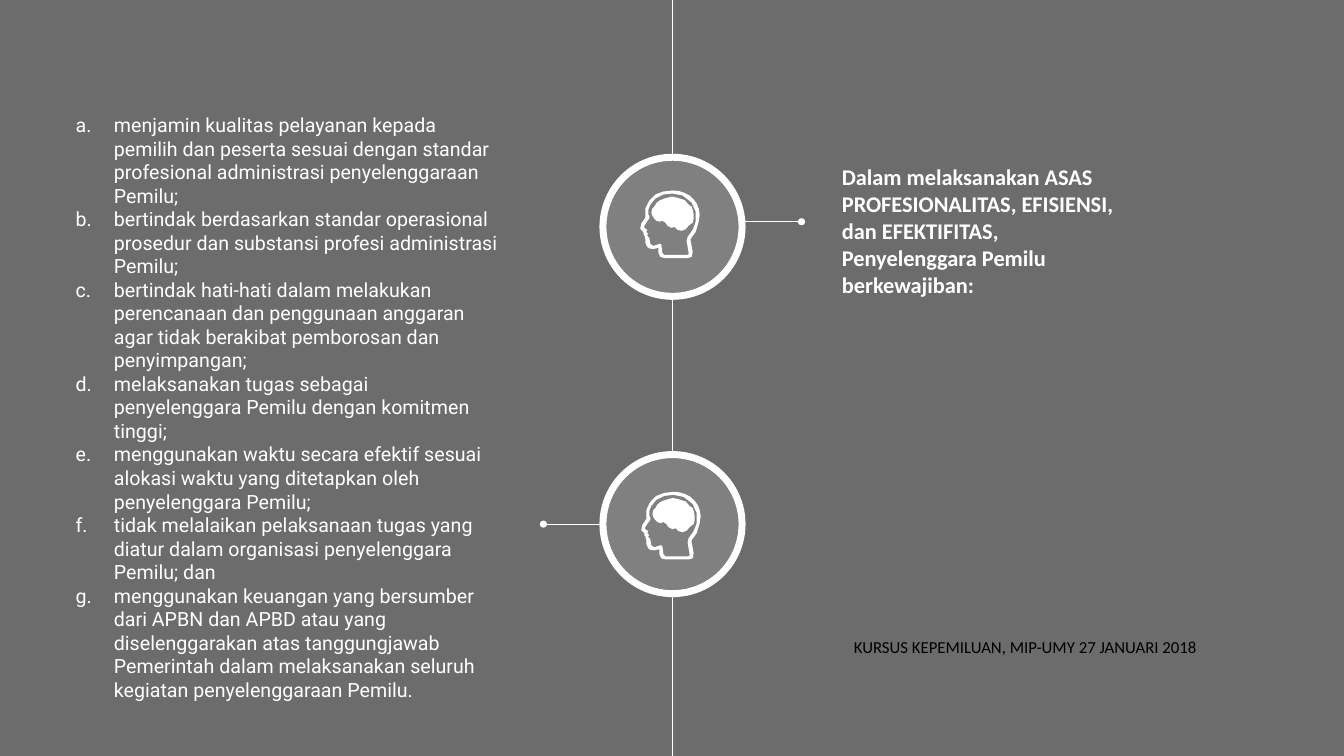
from lxml.etree import SubElement
from pptx import Presentation
from pptx.dml.color import RGBColor
from pptx.enum.shapes import MSO_CONNECTOR as Link, MSO_SHAPE as Kind
from pptx.enum.text import MSO_ANCHOR as Anchor, MSO_AUTO_SIZE as Fit, PP_ALIGN as Align
from pptx.oxml.ns import qn
from pptx.util import Inches, Pt

WHITE = RGBColor(0xFF, 0xFF, 0xFF)
BLACK = RGBColor(0, 0, 0)
DARK = RGBColor(0x6C, 0x6C, 0x6C)
GRAY = RGBColor(0x80, 0x80, 0x80)

HEADING = ("Dalam melaksanakan ASAS PROFESIONALITAS, EFISIENSI, dan EFEKTIFITAS, "
           "Penyelenggara Pemilu berkewajiban:")
DUTIES = [
    "menjamin kualitas pelayanan kepada pemilih dan peserta sesuai dengan standar "
    "profesional administrasi penyelenggaraan Pemilu;",
    "bertindak berdasarkan standar operasional prosedur dan substansi profesi "
    "administrasi Pemilu;",
    "bertindak hati-hati dalam melakukan perencanaan dan penggunaan anggaran agar "
    "tidak berakibat pemborosan dan penyimpangan;",
    "melaksanakan tugas sebagai penyelenggara Pemilu dengan komitmen tinggi;",
    "menggunakan waktu secara efektif sesuai alokasi waktu yang ditetapkan oleh "
    "penyelenggara Pemilu;",
    "tidak melalaikan pelaksanaan tugas yang diatur dalam organisasi penyelenggara "
    "Pemilu; dan",
    "menggunakan keuangan yang bersumber dari APBN dan APBD atau yang diselenggarakan "
    "atas tanggungjawab Pemerintah dalam melaksanakan seluruh kegiatan "
    "penyelenggaraan Pemilu.",
]
FOOTER = "KURSUS KEPEMILUAN, MIP-UMY 27 JANUARI 2018"

# Circle centre y, arm y, side of the arm (1 right, -1 left), icon corner
NODES = [(2.25, 2.2, 1, (6.35, 1.89)), (5.2, 5.2, -1, (6.36, 4.88))]
MID, WIDE, HIGH = 6.67, 13.33, 7.5
RING, DOT = 1.38, 0.07
ARM_IN, ARM_OUT = 0.43, 1.28

# Icon outlines in hundredths of an inch
SKULL = [(53, 9), (49, 5), (43, 2), (38, 0.5), (32, 0), (23, 1), (15, 4), (9, 10),
         (7, 14), (5, 18), (5, 27), (3, 30), (1, 33), (0, 38), (3, 41), (3, 43),
         (4, 44), (5, 48), (5, 52), (7, 56), (9, 57.5), (13, 58), (18, 57), (18, 62),
         (20, 66), (24, 67), (47, 67), (51, 66), (52, 61), (50, 50), (50, 48),
         (55, 41), (58, 31), (59, 24), (58, 18), (56, 13)]
INNER = [(55, 31), (52, 39), (47, 46), (46, 50), (48, 62), (48, 63), (47, 64), (24, 64),
         (22, 62), (21, 54), (20, 53), (19, 53), (13, 55), (10, 53), (9, 47), (7, 45),
         (7, 44), (8, 43), (6, 41), (7, 39), (4, 37), (4, 35), (8, 29), (9, 28),
         (9, 25), (8, 24), (8, 19), (10, 14), (15, 8), (23, 4), (32, 3), (42, 5),
         (51, 12), (55, 21)]
BRAIN = [(28, 2), (25, 1), (20, 0), (17, 1), (13, 2), (8, 4), (5, 6.5), (3, 10),
         (1, 12), (0, 16), (1, 19), (3, 22), (5, 24), (8, 25), (11, 24), (14, 26),
         (16, 29), (20, 31), (23, 30), (26, 33), (30, 34), (34, 32.5), (37, 29),
         (41, 26), (42, 22), (42, 18), (41, 13), (40, 10), (37, 8), (33, 3.5)]

deck = Presentation()
deck.slide_width, deck.slide_height = Inches(WIDE), Inches(HIGH)
slide = deck.slides.add_slide(deck.slide_layouts[1])
shapes = slide.shapes


def paint(shape, fill, edge=None):
    shape.shadow.inherit = False
    shape.fill.solid()
    shape.fill.fore_color.rgb = fill
    if edge:
        shape.line.color.rgb, shape.line.width = edge, Pt(5)
    else:
        shape.line.fill.background()
    return shape


def rule(x1, y1, x2, y2):
    line = shapes.add_connector(Link.STRAIGHT, *map(Inches, (x1, y1, x2, y2)))
    line.line.color.rgb, line.line.width = WHITE, Pt(0.5)
    SubElement(line._element.spPr, qn("a:effectLst"))


def disc(x, y, size, fill, edge=None):
    """Draw a circle around its centre."""
    box = map(Inches, (x - size / 2, y - size / 2, size, size))
    paint(shapes.add_shape(Kind.OVAL, *box), fill, edge)


def outline(left, top, *loops):
    fine = [[(x * 10, y * 10) for x, y in loop] for loop in loops]
    pen = shapes.build_freeform(*fine[0][0], scale=Inches(1) / 1000)
    for at, loop in enumerate(fine):
        if at:
            pen.move_to(*loop[0])
        pen.add_line_segments(loop[1:], close=True)
    paint(pen.convert_to_shape(Inches(left), Inches(top)), WHITE)


def write(shape, box, lines, look, wrap=True):
    shape.left, shape.top, shape.width, shape.height = map(Inches, box)
    frame = shape.text_frame
    frame.text = "\n".join(lines)
    frame.word_wrap, frame.vertical_anchor = wrap, Anchor.TOP
    frame.auto_size = Fit.SHAPE_TO_FIT_TEXT
    for para in frame.paragraphs:
        para.alignment, para.space_before = Align.LEFT, Pt(0)
        for run in para.runs:
            run.font.color.rgb = look["color"]
            for name in ("name", "size", "bold"):
                setattr(run.font, name, look[name])
    return frame


back = paint(shapes.add_shape(Kind.RECTANGLE, 0, 0, Inches(WIDE), Inches(HIGH)), DARK)
shapes._spTree.insert(2, back._element)
rule(MID, 0, MID, HIGH)

write(shapes.title, (8.25, 1.57, 3.12, 1.45), [HEADING],
      dict(name="Calibri", size=Pt(16), bold=True, color=WHITE))
duties = write(shapes.placeholders[1], (0.65, 1.07, 4.39, 5.76), DUTIES,
               dict(name="Roboto", size=Pt(14), bold=False, color=WHITE))
for para in duties.paragraphs:
    props = para._p.get_or_add_pPr()
    props.set("marL", str(Inches(0.38)))
    props.set("indent", str(-Inches(0.38)))
    SubElement(props, qn("a:buFont"), typeface="+mj-lt")
    SubElement(props, qn("a:buAutoNum"), type="alphaLcPeriod")

for mid, arm, side, (left, top) in NODES:
    tip = MID + side * ARM_OUT
    rule(tip, arm, MID + side * ARM_IN, arm)
    disc(tip, arm, DOT, WHITE)
    disc(MID, mid, RING, GRAY, WHITE)
    outline(left, top, SKULL, INNER)
    outline(left + 0.11, top + 0.06, BRAIN)

write(shapes.add_textbox(0, 0, 0, 0), (8.37, 6.27, 3.73, 0.3), [FOOTER],
      dict(name="Calibri", size=Pt(12), bold=False, color=BLACK), wrap=False)

deck.save("out.pptx")
